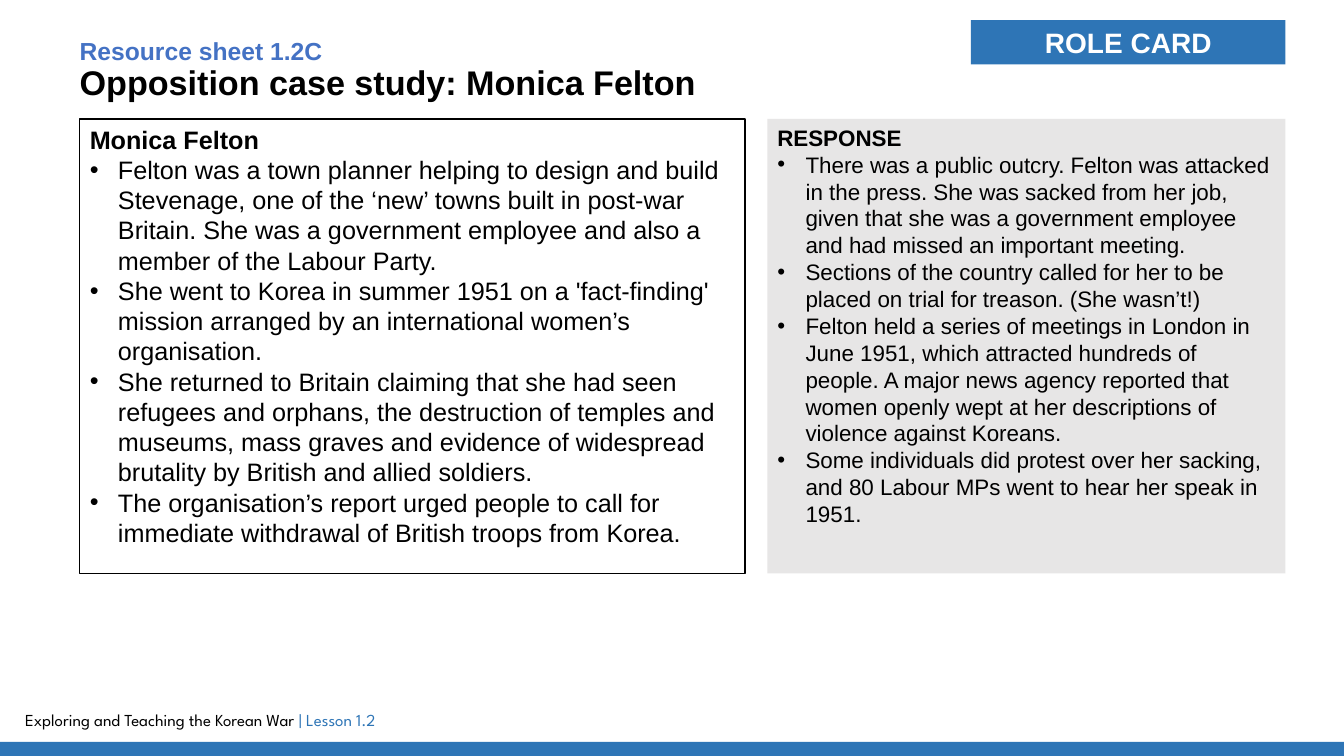
from lxml.etree import SubElement
from pptx import Presentation
from pptx.dml.color import RGBColor
from pptx.enum.shapes import MSO_SHAPE
from pptx.enum.text import MSO_ANCHOR, MSO_AUTO_SIZE, PP_ALIGN
from pptx.oxml.ns import qn
from pptx.util import Inches, Pt

BLUE, BLACK = "2E75B6", "000000"
W, H = 13.33, 7.5
LEFT, RIGHT, TOP, DEPTH, GAP = 0.79, 12.75, 1.18, 4.51, 0.22
CASE_W = 6.6
RESPONSE_X = LEFT + CASE_W + GAP


def place(sp, x, y, w, h, fill=None, line=None, anchor=MSO_ANCHOR.TOP):
    sp.left, sp.top, sp.width, sp.height = [Inches(v) for v in (x, y, w, h)]
    if fill:
        sp.fill.solid()
        sp.fill.fore_color.rgb = RGBColor.from_string(fill)
    if line:
        sp.line.color.rgb = RGBColor.from_string(line)
        sp.line.width = Pt(1)
    else:
        sp.line.fill.background()
    tf = sp.text_frame
    for name, value in {"word_wrap": True, "auto_size": MSO_AUTO_SIZE.NONE,
                        "vertical_anchor": anchor}.items():
        setattr(tf, name, value)
    return tf


def write(p, text, size, color=BLACK, bold=False, font="Arial"):
    r = p.add_run()
    r.text = text
    for name, value in {"size": Pt(size), "bold": bold, "name": font}.items():
        setattr(r.font, name, value)
    r.font.color.rgb = RGBColor.from_string(color)


prs = Presentation()
prs.slide_width, prs.slide_height = Inches(W), Inches(H)
s = prs.slides.add_slide(prs.slide_layouts[3])

tf = place(s.shapes.title, LEFT, 0.39, 8.18, 0.72)
for side in ("left", "right", "top", "bottom"):
    setattr(tf, f"margin_{side}", 0)
for i, (text, size, color) in enumerate([
    ("Resource sheet 1.2C", 17.6, "4472C4"),
    ("Opposition case study: Monica Felton", 24.4, BLACK),
]):
    p = tf.add_paragraph() if i else tf.paragraphs[0]
    p.alignment, p.line_spacing = PP_ALIGN.LEFT, 0.9
    write(p, text, size, color, True)

cards = [
    (1, LEFT, CASE_W, None, BLACK, 18, "Monica Felton", [
        "Felton was a town planner helping to design and build Stevenage, one of the ‘new’ towns built in post-war Britain. She was a government employee and also a member of the Labour Party.",
        "She went to Korea in summer 1951 on a 'fact-finding' mission arranged by an international women’s organisation.",
        "She returned to Britain claiming that she had seen refugees and orphans, the destruction of temples and museums, mass graves and evidence of widespread brutality by British and allied soldiers.",
        "The organisation’s report urged people to call for immediate withdrawal of British troops from Korea.",
    ]),
    (2, RESPONSE_X, RIGHT - RESPONSE_X, "E7E6E6", None, 16, "RESPONSE", [
        "There was a public outcry. Felton was attacked in the press. She was sacked from her job, given that she was a government employee and had missed an important meeting.",
        "Sections of the country called for her to be placed on trial for treason. (She wasn’t!)",
        "Felton held a series of meetings in London in June 1951, which attracted hundreds of people. A major news agency reported that women openly wept at her descriptions of violence against Koreans.",
        "Some individuals did protest over her sacking, and 80 Labour MPs went to hear her speak in 1951.",
    ]),
]
for idx, x, w, fill, line, size, heading, points in cards:
    tf = place(s.placeholders[idx], x, TOP, w, DEPTH, fill, line)
    for i, text in enumerate([heading] + points):
        p = tf.add_paragraph() if i else tf.paragraphs[0]
        pPr = p._p.get_or_add_pPr()
        indent = Inches(0.28) if i else 0
        pPr.set("marL", str(indent))
        pPr.set("indent", str(-indent))
        if i:
            SubElement(pPr, qn("a:buFont")).set("typeface", "Arial")
            SubElement(pPr, qn("a:buChar")).set("char", "•")
        else:
            SubElement(pPr, qn("a:buNone"))
        p.space_before = Pt(0)
        write(p, text, size, bold=i == 0)

for x, y, w, h, label in [
    (9.63, 0.2, RIGHT - 9.63, 0.44, "ROLE CARD"),
    (0, 7.36, W, H - 7.36, ""),
]:
    sp = s.shapes.add_shape(MSO_SHAPE.RECTANGLE, 0, 0, 0, 0)
    sp.shadow.inherit = False
    tf = place(sp, x, y, w, h, BLUE, anchor=MSO_ANCHOR.MIDDLE)
    if label:
        p = tf.paragraphs[0]
        p.alignment = PP_ALIGN.CENTER
        write(p, label, 20, "FFFFFF", True)

tf = place(s.shapes.add_textbox(0, 0, 0, 0), 0.15, 6.99, 5.81, 0.3)
p = tf.paragraphs[0]
write(p, "Exploring and Teaching the Korean War ", 12, font="League Spartan")
write(p, "| Lesson 1.2", 12, BLUE, font="League Spartan")

prs.save("out.pptx")
